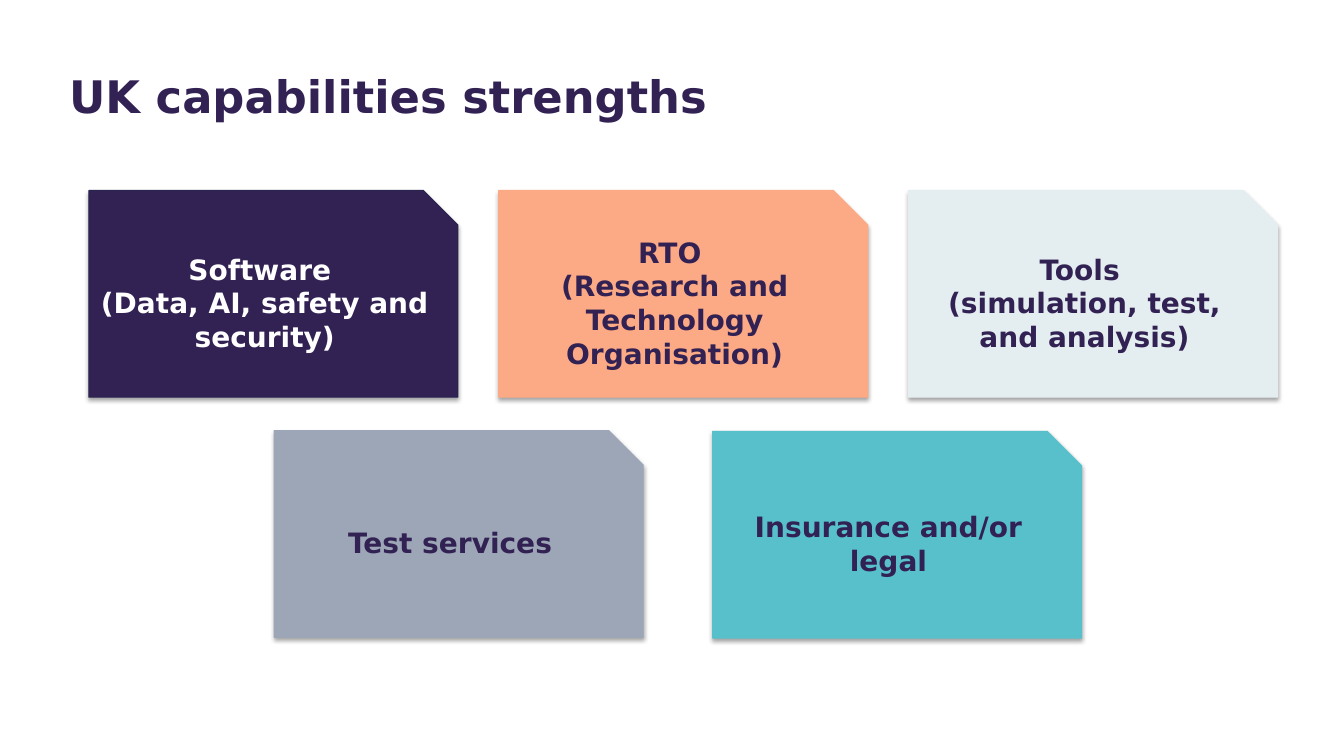
from lxml import etree
from pptx import Presentation
from pptx.dml.color import RGBColor
from pptx.enum.shapes import MSO_SHAPE
from pptx.enum.text import MSO_ANCHOR, PP_ALIGN
from pptx.oxml import parse_xml
from pptx.util import Cm, Pt

SNIPPED = MSO_SHAPE.SNIP_1_RECTANGLE
MIDDLE = MSO_ANCHOR.MIDDLE
CENTER = PP_ALIGN.CENTER

COLORS = {
    "purple": "322153",
    "dark purple": "29254F",
    "peach": "FCAA85",
    "pale": "E4EDEF",
    "grey": "9DA6B6",
    "teal": "57C0CB",
    "white": "FFFFFF",
}
FONT = "DejaVu Sans"
SHADOW = (
    '<a:effectLst xmlns:a="http://schemas.openxmlformats.org/drawingml/2006/main">'
    '<a:outerShdw blurRad="40000" dist="23000" dir="5400000" rotWithShape="0">'
    '<a:srgbClr val="000000"><a:alpha val="35000"/></a:srgbClr>'
    "</a:outerShdw></a:effectLst>"
)

CARD_WIDTH, CARD_HEIGHT = 9.3, 5.21
TOP_ROW, TOP_LEFT, TOP_PITCH = 4.8, 2.24, 10.33

# left, top, fill, line, text colour, paragraphs
CARDS = [
    (TOP_LEFT, TOP_ROW, "purple", "dark purple", "white",
     ["Software ", "(Data, AI, safety and security)"]),
    (TOP_LEFT + TOP_PITCH, TOP_ROW, "peach", "peach", "purple",
     ["RTO ", "(Research and Technology Organisation)"]),
    (TOP_LEFT + 2 * TOP_PITCH, TOP_ROW, "pale", "pale", "purple",
     ["Tools ", "(simulation, test, and analysis)"]),
    (6.91, 10.85, "grey", "grey", "purple", ["Test services"]),
    (17.96, 10.87, "teal", "teal", "purple", ["Insurance and/or legal"]),
]


def rgb(name):
    return RGBColor.from_string(COLORS[name])


def write_paragraph(paragraph, text, size, color):
    run = paragraph.add_run()
    run.text = text
    text_format = {"name": FONT, "size": Pt(size), "bold": True}
    for attribute, value in text_format.items():
        setattr(run.font, attribute, value)
    run.font.color.rgb = rgb(color)


presentation = Presentation()
presentation.slide_width = Cm(33.87)
presentation.slide_height = Cm(19.05)
slide = presentation.slides.add_slide(presentation.slide_layouts[6])

title = slide.shapes.add_textbox(Cm(1.55), Cm(1.47), Cm(27.81), Cm(2.36))
title_frame = title.text_frame
title_format = {"word_wrap": True, "margin_left": Cm(0.19), "margin_top": Cm(0.25)}
for attribute, value in title_format.items():
    setattr(title_frame, attribute, value)
write_paragraph(title_frame.paragraphs[0], "UK capabilities strengths", 32, "purple")

for left, top, fill, line, text_color, lines in CARDS:
    card = slide.shapes.add_shape(
        SNIPPED, Cm(left), Cm(top), Cm(CARD_WIDTH), Cm(CARD_HEIGHT))
    card.fill.solid()
    card.fill.fore_color.rgb = rgb(fill)
    card.line.color.rgb = rgb(line)
    card.line.width = Pt(0.75)
    card.element.spPr.append(parse_xml(SHADOW))

    frame = card.text_frame
    frame.word_wrap = True
    frame.vertical_anchor = MIDDLE
    for index, text in enumerate(lines):
        paragraph = frame.add_paragraph() if index else frame.paragraphs[0]
        paragraph.alignment = CENTER
        write_paragraph(paragraph, text, 20, text_color)

presentation.save("out.pptx")
